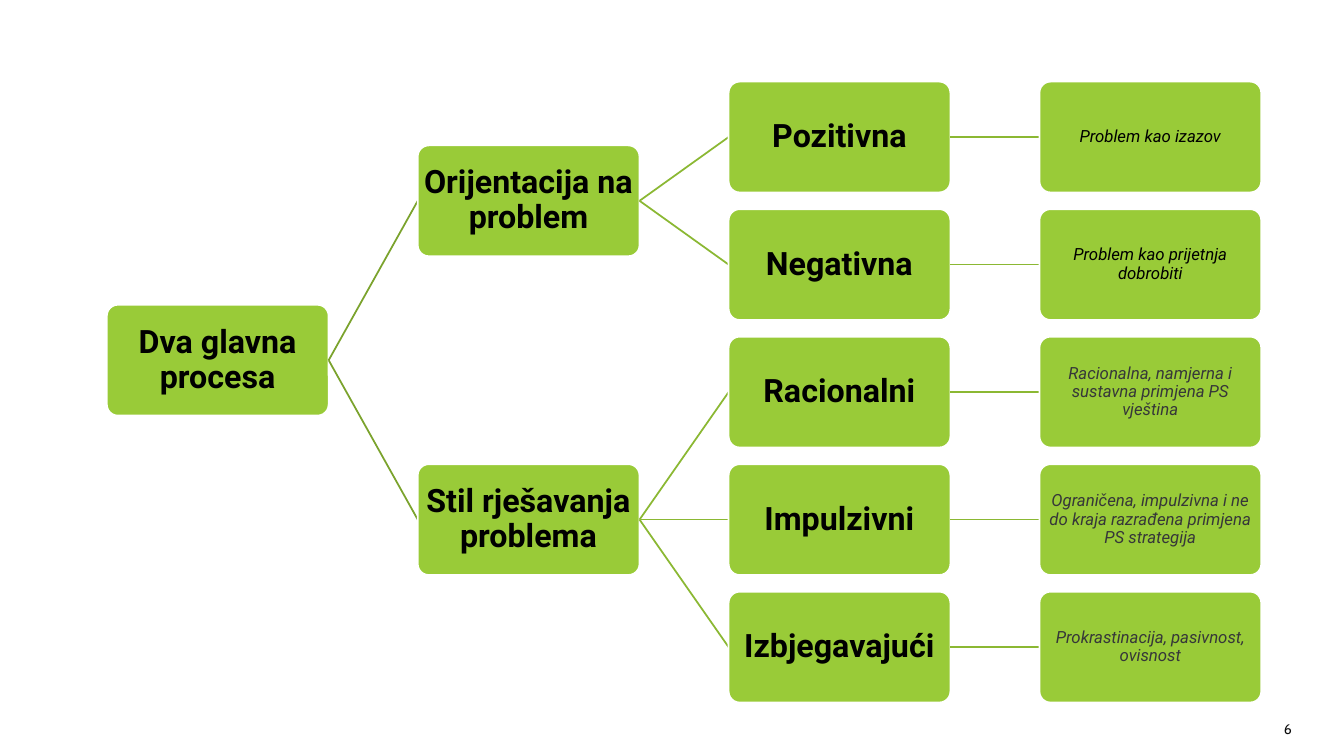
from lxml import etree
from pptx import Presentation
from pptx.dml.color import RGBColor
from pptx.enum.shapes import MSO_CONNECTOR, MSO_SHAPE
from pptx.enum.text import MSO_ANCHOR, PP_ALIGN
from pptx.oxml.ns import qn
from pptx.util import Inches, Pt

ROUNDED = MSO_SHAPE.ROUNDED_RECTANGLE
STRAIGHT = MSO_CONNECTOR.STRAIGHT
MIDDLE = MSO_ANCHOR.MIDDLE
CENTER, RIGHT = PP_ALIGN.CENTER, PP_ALIGN.RIGHT
LEFT_SIDE, RIGHT_SIDE = 1, 3

BLACK, GREY, GREEN, WHITE = "000000", "363739", "99CB38", "FFFFFF"
LINE_COLOURS = {1: "7BA32D", 2: "8BB833", 3: "8BB833"}
TREE_BOX = (1.06, 0.81, 11.45, 6.16)
COLUMNS, ROWS = 4, 5
NODE_W, NODE_H = 2.2, 1.1
NOTE_LEVEL = 3

# Each node: label, children, text colour
TREE = ("Dva glavna procesa", [
    ("Orijentacija na problem", [
        ("Pozitivna", [("Problem kao izazov", [], BLACK)], BLACK),
        ("Negativna", [("Problem kao prijetnja dobrobiti", [], BLACK)], BLACK),
    ], BLACK),
    ("Stil rješavanja problema", [
        ("Racionalni", [("Racionalna, namjerna i sustavna primjena PS vještina",
                         [], GREY)], BLACK),
        ("Impulzivni", [("Ograničena, impulzivna i ne do kraja razrađena "
                         "primjena PS strategija", [], GREY)], BLACK),
        ("Izbjegavajući", [("Prokrastinacija, pasivnost, ovisnost",
                            [], GREY)], BLACK),
    ], BLACK),
], BLACK)


def colour(value):
    return RGBColor.from_string(value)


def set_text(sp, text, font, size, text_colour, align, inset):
    tf = sp.text_frame
    tf.word_wrap = True
    tf.vertical_anchor = MIDDLE
    tf.margin_left = tf.margin_right = Inches(inset)
    tf.margin_top = tf.margin_bottom = Inches(inset)
    p = tf.paragraphs[0]
    p.text = text
    p.alignment = align
    p.font.name = font
    p.font.size = Pt(size)
    p.font.color.rgb = colour(text_colour)
    return p


def add_node(slide, x, y, level, label, text_colour):
    sp = slide.shapes.add_shape(ROUNDED, Inches(x), Inches(y),
                                Inches(NODE_W), Inches(NODE_H))
    sp.adjustments[0] = 0.1
    sp.shadow.inherit = False
    sp.fill.solid()
    sp.fill.fore_color.rgb = colour(GREEN)
    sp.line.color.rgb = colour(WHITE)
    sp.line.width = Pt(1.25)
    is_note = level == NOTE_LEVEL
    p = set_text(sp, label, "Roboto", 12 if is_note else 23, text_colour,
                 CENTER, 0.01 if is_note else 0.02)
    p.line_spacing = 0.9
    p.font.bold = not is_note
    p.font.italic = is_note
    return sp


def add_branch(slide, level):
    line = slide.shapes.add_connector(STRAIGHT, 0, 0, 0, 0)
    line.line.color.rgb = colour(LINE_COLOURS[level])
    line.line.width = Pt(1.25)
    etree.SubElement(line._element.spPr, qn("a:effectLst"))
    return line


def count_leaves(node):
    return sum(map(count_leaves, node[1])) or 1


def middle_row(node, first_row):
    """Row halfway between the first and the last child."""
    children = node[1]
    if not children:
        return first_row
    last_row = first_row + count_leaves(node) - count_leaves(children[-1])
    return (middle_row(children[0], first_row)
            + middle_row(children[-1], last_row)) / 2


def add_tree(slide, box, node, level=0, first_row=0, parent=None):
    left, top, width, height = box
    label, children, text_colour = node
    x = left + level * (width - NODE_W) / (COLUMNS - 1)
    y = top + middle_row(node, first_row) * (height - NODE_H) / (ROWS - 1)

    # The branch lies behind the node it leads to
    line = add_branch(slide, level) if parent else None
    sp = add_node(slide, x, y, level, label, text_colour)
    if line:
        line.begin_connect(parent, RIGHT_SIDE)
        line.end_connect(sp, LEFT_SIDE)

    for child in children:
        add_tree(slide, box, child, level + 1, first_row, sp)
        first_row += count_leaves(child)


def add_page_number(slide, box, number):
    sp = slide.shapes.add_textbox(*map(Inches, box))
    set_text(sp, number, "Cabin", 10, "0D0D0D", RIGHT, 0.1)


def main():
    prs = Presentation()
    prs.slide_width, prs.slide_height = Inches(13.33), Inches(7.5)
    slide = prs.slides.add_slide(prs.slide_layouts[6])
    add_page_number(slide, (11.85, 7.08, 1.06, 0.3), "6")
    add_tree(slide, TREE_BOX, TREE)
    prs.save("out.pptx")


if __name__ == "__main__":
    main()
